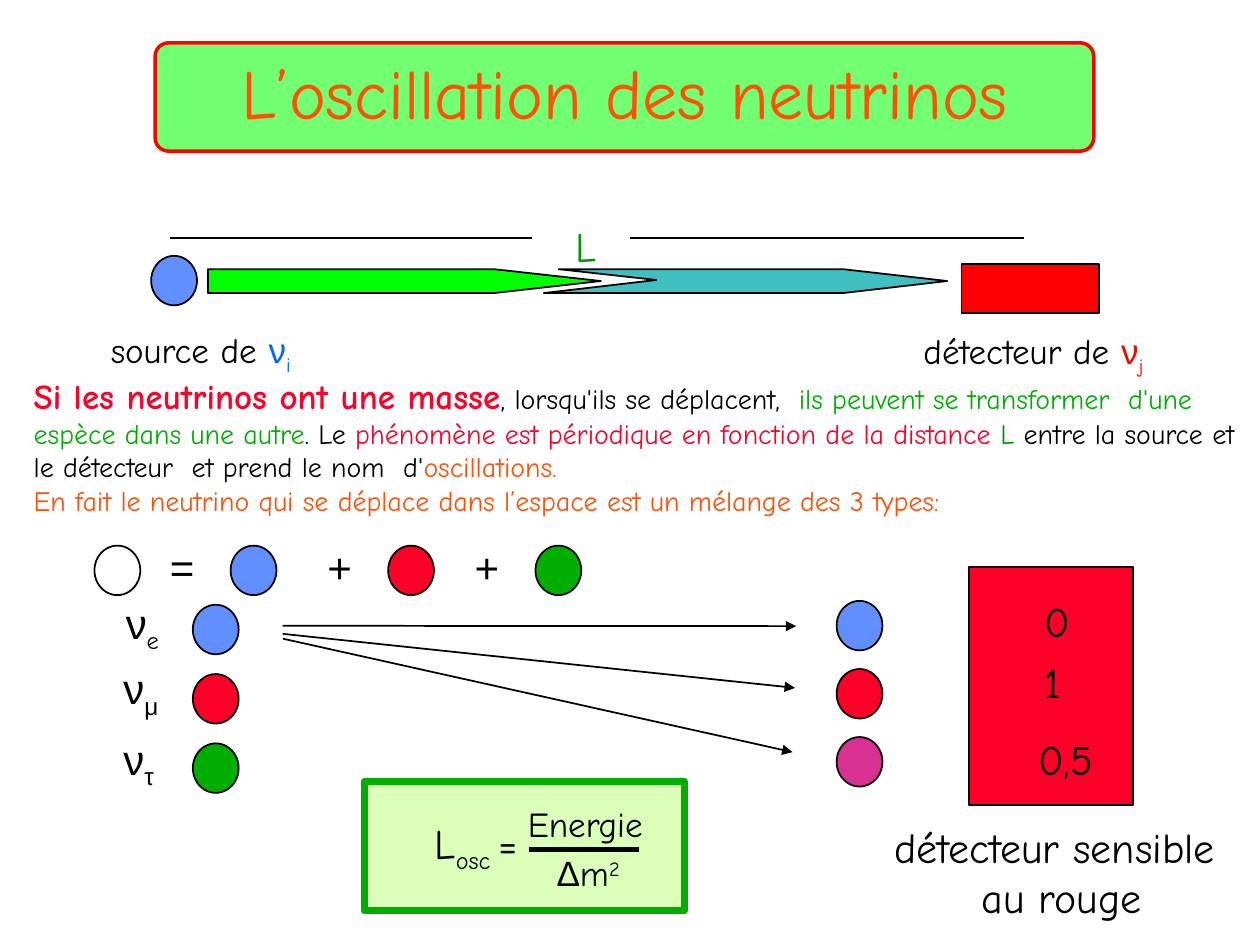
import pptx
import pptx.util
import pptx.dml.color
import pptx.enum.shapes
import pptx.enum.text
import pptx.oxml
from dataclasses import dataclass

Pt = pptx.util.Pt
SHAPE = pptx.enum.shapes.MSO_SHAPE
ALIGN = pptx.enum.text.PP_ALIGN
ANCHOR = pptx.enum.text.MSO_ANCHOR
AUTO = pptx.enum.text.MSO_AUTO_SIZE


@dataclass(frozen=True)
class Theme:
    black: str = "000000"
    white: str = "FFFFFF"
    red: str = "FC0128"
    pure_red: str = "FF0000"
    green: str = "00AE00"
    dark_green: str = "009900"
    beam_green: str = "00FF00"
    teal: str = "3FBFBF"
    blue: str = "618FFD"
    text_blue: str = "0066FF"
    violet: str = "D93192"
    orange: str = "FF5008"
    title_fill: str = "72FF72"
    formula_fill: str = "DBFFB8"
    hand: str = "Comic Neue"
    greek: str = "Arial"
    title: int = 40
    large: int = 24
    medium: int = 20
    body: int = 16


T = Theme()
BALL = (26.2, 28.3)
SUB, SUPER = -25, 30


def rgb(value):
    return pptx.dml.color.RGBColor.from_string(value)


def set_all(obj, formats):
    for name, value in formats.items():
        setattr(obj, name, value)


def run(text, size=T.large, color=T.black, font=T.hand, base=0, bold=False):
    return text, size, color, font, base, bold


def write(tf, paragraphs, **formats):
    for i, runs in enumerate(paragraphs):
        p = tf.paragraphs[0] if i == 0 else tf.add_paragraph()
        set_all(p, formats)
        for text, size, color, font, base, bold in runs:
            r = p.add_run()
            r.text = text
            set_all(r.font, {"size": Pt(size), "name": font, "bold": bold})
            r.font.color.rgb = rgb(color)
            if base:
                r.font._element.set("baseline", str(base * 1000))


def text(s, box, *paragraphs, wrap=False, align=ALIGN.LEFT):
    tf = s.shapes.add_textbox(*map(Pt, box)).text_frame
    set_all(tf, {"word_wrap": wrap, "auto_size": AUTO.SHAPE_TO_FIT_TEXT})
    write(tf, paragraphs, alignment=align)


def paint(sp, fill, line, width):
    sp.shadow.inherit = False
    sp.fill.solid()
    sp.fill.fore_color.rgb = rgb(fill)
    sp.line.color.rgb = rgb(line)
    sp.line.width = Pt(width)
    return sp


def shape(s, kind, box, fill, line=T.black, width=1):
    return paint(s.shapes.add_shape(kind, *map(Pt, box)), fill, line, width)


def ball(s, x, y, fill):
    shape(s, SHAPE.OVAL, (x, y, *BALL), fill)


def outline(s, points, fill):
    pts = [(Pt(x), Pt(y)) for x, y in points]
    fb = s.shapes.build_freeform(*pts[0])
    fb.add_line_segments(pts[1:], close=True)
    paint(fb.convert_to_shape(), fill, T.black, 1)


def line(s, ends, width=1, arrow=False):
    c = s.shapes.add_connector(pptx.enum.shapes.MSO_CONNECTOR.STRAIGHT, *map(Pt, ends))
    c.line.color.rgb = rgb(T.black)
    c.line.width = Pt(width)
    if arrow:
        tail = pptx.oxml.ns.qn("a:tailEnd")
        c.line._get_or_add_ln().makeelement(tail)
        ln = c.line._get_or_add_ln()
        ln.append(ln.makeelement(tail, {"type": "triangle"}))
    sp_pr = c._element.spPr
    sp_pr.append(sp_pr.makeelement(pptx.oxml.ns.qn("a:effectLst")))


def title(s):
    sp = shape(s, SHAPE.ROUNDED_RECTANGLE, (88.6, 24.5, 536.4, 61.9), T.title_fill, T.pure_red, 2)
    sp.adjustments[0] = 0.125
    sp.text_frame.vertical_anchor = ANCHOR.MIDDLE
    write(sp.text_frame, [[run("L’oscillation des neutrinos", T.title, T.orange)]],
          alignment=ALIGN.CENTER, line_spacing=0.9)


def beam(s):
    ends = (
        ((56.2, 184.3, 126, 31), "source de ", "i", T.text_blue),
        ((520.6, 185, 159.8, 31), "détecteur de ", "j", T.pure_red),
    )
    for box, label, index, color in ends:
        text(s, box, [run(label, T.medium), run("ν", T.medium, color, T.greek),
                      run(index, T.medium, color, base=SUB)])
    top, mid, bottom = 153.8, 160.6, 167.5
    shape(s, SHAPE.RECTANGLE, (549.5, 151, 78.5, 28.1), T.pure_red)
    outline(s, [(319.2, top), (481.7, top), (541.3, mid), (481.7, bottom),
                (310.7, bottom), (375, 160)], T.teal)
    outline(s, [(118.8, top), (282.2, top), (343.4, mid), (282.2, bottom),
                (118.8, bottom)], T.beam_green)
    ball(s, 86.4, 146.2, T.blue)
    text(s, (321.8, 122.4, 27.4, 36), [run("L", color=T.dark_green)])
    for x1, x2 in ((97.2, 303.8), (360, 585.4)):
        line(s, (x1, 136.2, x2, 136.2))


def explanation(s):
    first = [
        run("Si les neutrinos ont une masse", T.medium, T.red, bold=True),
        run(", lorsqu'ils se déplacent,  ", T.body),
        run("ils peuvent se transformer  d'une espèce dans une autre", T.body, T.green),
        run(". Le ", T.body),
        run("phénomène est périodique en fonction de la distance ", T.body, T.red),
        run("L", T.body, T.dark_green),
        run(" entre la source et le détecteur  et prend le nom  d'", T.body),
        run("oscillations.", T.body, T.orange),
    ]
    second = [run("En fait le neutrino qui se déplace dans l’espace est un mélange des 3 types:",
                  T.body, T.orange)]
    text(s, (12.2, 210.2, 707.8, 108.7), first, second, wrap=True)


def mixture(s):
    for x, fill in ((54, T.white), (131.8, T.blue), (221.8, T.red), (306, T.green)):
        ball(s, x, 311.8, fill)
    for x, width, sign in ((90, 28.8, "="), (180, 36, "+"), (264.2, 28.8, "+")):
        text(s, (x, 306, width, 36.7), [run(sign, font=T.greek)], wrap=True)


def flavours(s):
    for i, fill in enumerate((T.blue, T.red, T.green)):
        ball(s, 110.2, 345.6 + 39.6 * i, fill)
    for i, fill in enumerate((T.blue, T.red, T.violet)):
        ball(s, 478.1, 343.4 + 38.9 * i, fill)
    for x, y, index, font in ((64.8, 337.7, "e", T.hand), (63.4, 375.1, "μ", T.greek),
                              (63.4, 415.4, "τ", T.greek)):
        text(s, (x, y, 36, 36), [run("ν", font=T.greek), run(index, font=font, base=SUB)])
    for ends in ((161.5, 357.6, 455, 357.8), (161.5, 362.2, 454.3, 393.1),
                 (161.8, 365, 452.9, 429.8)):
        line(s, ends, arrow=True)


def detector(s):
    shape(s, SHAPE.RECTANGLE, (553.7, 324, 93.6, 136.1), T.red)
    for x, y, width, value in ((589.7, 337, 28.8, "0"), (589.7, 371.5, 25.2, "1"),
                               (586.1, 415.4, 50.4, "0,5")):
        text(s, (x, y, width, 36), [run(value)])
    text(s, (489.6, 465.8, 226, 65.5), [run("détecteur sensible")], [run(" au rouge")],
         align=ALIGN.CENTER)


def formula(s):
    sp = shape(s, SHAPE.RECTANGLE, (208.1, 446.4, 182.9, 74.2), T.formula_fill, T.green, 4)
    set_all(sp.text_frame, {"word_wrap": False, "vertical_anchor": ANCHOR.MIDDLE})
    write(sp.text_frame, [[run("L"), run("osc ", base=SUB), run("= ---- ")]],
          alignment=ALIGN.CENTER)
    text(s, (294.5, 455, 85.7, 31.7), [run("Energie", T.medium)])
    text(s, (311, 483.1, 50.4, 31.7), [run("Δ", T.medium, font=T.greek), run("m", T.medium),
                                     run("2", T.medium, base=SUPER)])
    line(s, (302.4, 485.3, 365, 485.3), width=3)


def main():
    prs = pptx.Presentation()
    set_all(prs, {"slide_width": Pt(720), "slide_height": Pt(540)})
    s = prs.slides.add_slide(prs.slide_layouts[6])
    for part in (title, beam, explanation, flavours, detector, formula, mixture):
        part(s)
    prs.save("out.pptx")


if __name__ == "__main__":
    main()
